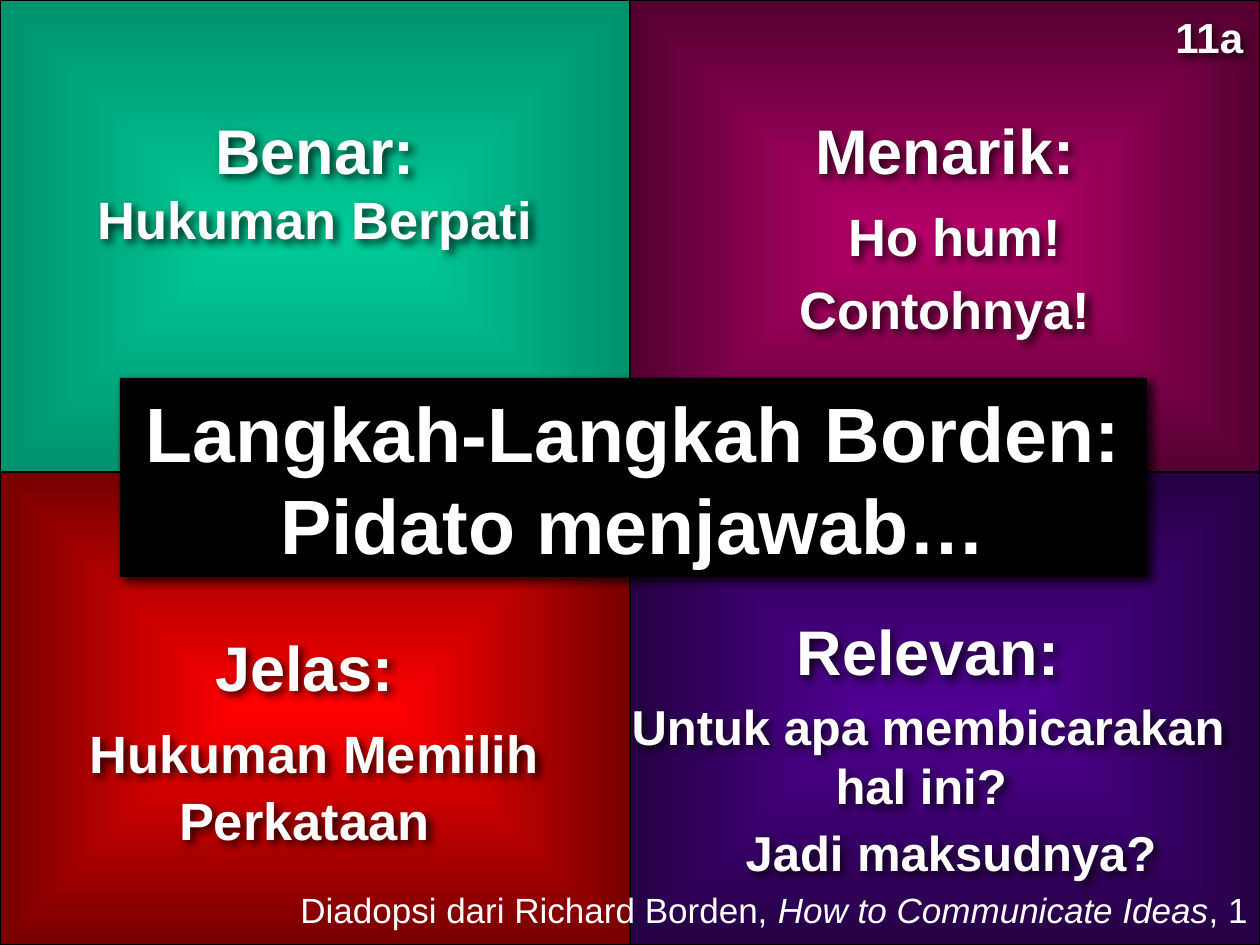
from dataclasses import dataclass

from lxml.etree import SubElement
from pptx import Presentation
from pptx.dml.color import RGBColor
from pptx.enum.shapes import MSO_SHAPE as Shape
from pptx.enum.text import MSO_ANCHOR as Anchor, PP_ALIGN as Align
from pptx.oxml import parse_xml
from pptx.oxml.ns import qn
from pptx.shapes.autoshape import Shape as AutoShape
from pptx.slide import Slide
from pptx.util import Emu, Pt

EMU_PER_INCH = 914400
PX_PER_INCH = 126
WIDTH, HEIGHT = 1260, 945
HALF_WIDTH, HALF_HEIGHT = 630, 472
FONT = "Arial"
DRAWING_NS = "http://schemas.openxmlformats.org/drawingml/2006/main"

COLORS = {
    "black": "000000",
    "white": "FFFFFF",
    "green": "00CC99",
    "green_edge": "00926D",
    "magenta": "B50069",
    "magenta_edge": "540031",
    "purple": "500093",
    "purple_edge": "250044",
    "red": "FF0000",
    "red_edge": "760000",
}


@dataclass(frozen=True)
class Quadrant:
    column: int
    row: int
    color: str


@dataclass(frozen=True)
class TextRun:
    text: str
    size: int
    bold: bool = True
    italic: bool = False


@dataclass(frozen=True)
class Caption:
    left: int
    top: int
    width: int
    height: int
    lines: tuple[tuple[TextRun, ...], ...]
    align: Align = Align.CENTER
    shadow: bool = True


QUADRANTS = (
    Quadrant(0, 0, "green"),
    Quadrant(1, 0, "magenta"),
    Quadrant(1, 1, "purple"),
    Quadrant(0, 1, "red"),
)

TITLE = Caption(120, 378, 1027, 199, (
    (TextRun("Langkah-Langkah Borden:", 44),),
    (TextRun("Pidato menjawab…", 44),),
))

CAPTIONS = (
    Caption(0, 105, 630, 152, (
        (TextRun("Benar:", 36),),
        (TextRun("Hukuman Berpati", 30),),
    )),
    Caption(-21, 622, 651, 237, (
        (TextRun("Jelas:", 36),),
        (TextRun(" ", 40), TextRun("Hukuman Memilih Perkataan", 30)),
    )),
    Caption(630, 105, 630, 180, (
        (TextRun("Menarik:", 36),),
        (TextRun(" ", 40), TextRun("Ho hum!", 30)),
    )),
    Caption(597, 606, 662, 89, ((TextRun("Relevan:", 36),),)),
    Caption(1163, 5, 97, 63, ((TextRun("11a", 24),),), Align.LEFT),
    Caption(583, 690, 690, 131, ((TextRun("Untuk apa membicarakan hal ini? ", 28),),)),
    Caption(630, 271, 630, 77, ((TextRun("Contohnya!", 30),),)),
    Caption(620, 816, 662, 72, ((TextRun("Jadi maksudnya?", 28),),)),
    Caption(105, 882, 1155, 55, ((
        TextRun("Diadopsi dari Richard Borden, ", 20, bold=False),
        TextRun("How to Communicate Ideas", 20, bold=False, italic=True),
        TextRun(", 1", 20, bold=False),
    ),), Align.RIGHT, shadow=False),
)


def px(length: int) -> Emu:
    return Emu(round(length * EMU_PER_INCH / PX_PER_INCH))


def rgb(name: str) -> RGBColor:
    return RGBColor.from_string(COLORS[name])


def fill_from_center(shape: AutoShape, color: str) -> None:
    gradient = parse_xml(
        f'<a:gradFill xmlns:a="{DRAWING_NS}" rotWithShape="0"><a:gsLst>'
        f'<a:gs pos="0"><a:srgbClr val="{COLORS[color]}"/></a:gs>'
        f'<a:gs pos="100000"><a:srgbClr val="{COLORS[color + "_edge"]}"/></a:gs>'
        '</a:gsLst><a:path path="shape">'
        '<a:fillToRect l="50000" t="50000" r="50000" b="50000"/>'
        '</a:path></a:gradFill>'
    )
    shape.fill.background()
    properties = shape._element.spPr
    properties.replace(properties.find(qn("a:noFill")), gradient)


def add_shadow(shape: AutoShape) -> None:
    shape.shadow.inherit = False
    effects = shape._element.spPr.find(qn("a:effectLst"))
    shadow = SubElement(effects, qn("a:outerShdw"), blurRad=str(Pt(5)),
                        dist=str(Pt(3)), dir="2700000", algn="tl", rotWithShape="0")
    color = SubElement(shadow, qn("a:srgbClr"), val=COLORS["black"])
    SubElement(color, qn("a:alpha"), val="75000")


def add_quadrant(slide: Slide, quadrant: Quadrant) -> None:
    left, top = quadrant.column * HALF_WIDTH, quadrant.row * HALF_HEIGHT
    height = HEIGHT - HALF_HEIGHT if quadrant.row else HALF_HEIGHT
    shape = slide.shapes.add_shape(
        Shape.RECTANGLE, px(left), px(top), px(HALF_WIDTH), px(height))
    shape.shadow.inherit = False
    fill_from_center(shape, quadrant.color)
    shape.line.color.rgb = rgb("black")
    shape.line.width = Pt(1)


def write_text(shape: AutoShape, caption: Caption) -> None:
    frame = shape.text_frame
    frame.word_wrap = True
    paragraph = frame.paragraphs[0]
    paragraph.alignment = caption.align
    for index, line in enumerate(caption.lines):
        if index:
            paragraph.add_line_break()
        for text_run in line:
            run = paragraph.add_run()
            run.text = text_run.text
            run.font.name = FONT
            run.font.size = Pt(text_run.size)
            run.font.bold = text_run.bold
            run.font.italic = text_run.italic
            run.font.color.rgb = rgb("white")


def add_caption(slide: Slide, caption: Caption) -> AutoShape:
    shape = slide.shapes.add_textbox(
        px(caption.left), px(caption.top), px(caption.width), px(caption.height))
    write_text(shape, caption)
    if caption.shadow:
        add_shadow(shape)
    return shape


def add_title(slide: Slide, title: Caption) -> None:
    shape = add_caption(slide, title)
    shape.fill.solid()
    shape.fill.fore_color.rgb = rgb("black")
    shape.text_frame.vertical_anchor = Anchor.MIDDLE


def main() -> None:
    presentation = Presentation()
    presentation.slide_width, presentation.slide_height = px(WIDTH), px(HEIGHT)
    slide = presentation.slides.add_slide(presentation.slide_layouts[6])
    slide.background.fill.solid()
    slide.background.fill.fore_color.rgb = rgb("black")
    for quadrant in QUADRANTS:
        add_quadrant(slide, quadrant)
    add_title(slide, TITLE)
    for caption in CAPTIONS:
        add_caption(slide, caption)
    presentation.save("out.pptx")


if __name__ == "__main__":
    main()
